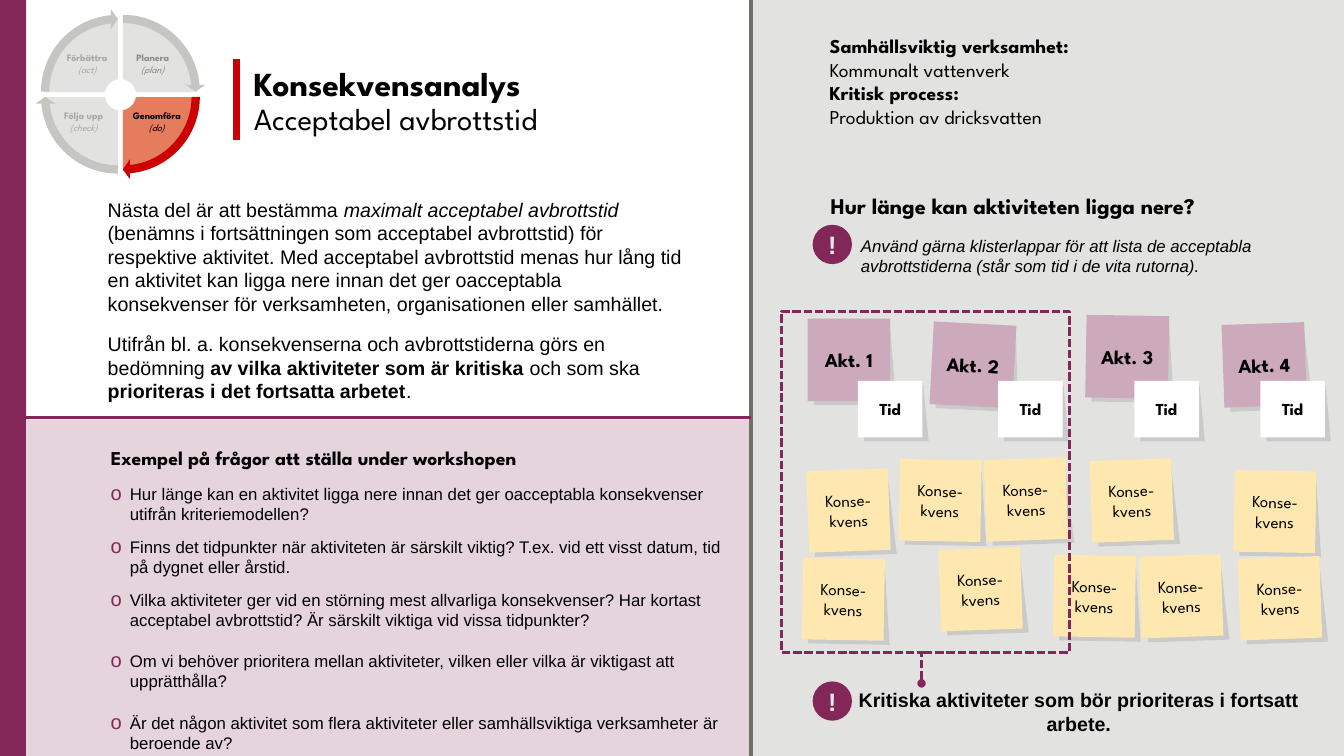
from math import asin, cos, pi, sin

from lxml.etree import SubElement
from pptx import Presentation
from pptx.dml.color import RGBColor
from pptx.enum.dml import MSO_LINE_DASH_STYLE as Dash
from pptx.enum.shapes import MSO_CONNECTOR as Connector
from pptx.enum.shapes import MSO_SHAPE as Preset
from pptx.enum.text import MSO_ANCHOR as Anchor
from pptx.enum.text import PP_ALIGN as Align
from pptx.oxml.ns import qn
from pptx.util import Inches, Pt

COLORS = {
    "plum": "822757", "pale plum": "E6D4DD", "activity": "CDA9BC",
    "consequence": "FEE8B0", "panel": "E2E2E1", "divider": "6F6E67",
    "red": "CC0000", "coral": "E67C5E", "arrow": "C5C5C2", "muted": "A9A8A4",
    "dark muted": "8C8B85", "mark": "E7E6E6", "black": "000000", "white": "FFFFFF",
}
HEADING, BODY = "League Spartan", "Arial"
HUB_X, HUB_Y = 1.195, 0.94

QUESTIONS = [
    ("Hur länge kan en aktivitet ligga nere innan det ger oacceptabla konsekvenser utifrån kriteriemodellen?", 9),
    ("Finns det tidpunkter när aktiviteten är särskilt viktig? T.ex. vid ett visst datum, tid på dygnet eller årstid.", 9),
    ("Vilka aktiviteter ger vid en störning mest allvarliga konsekvenser? Har kortast acceptabel avbrottstid? "
     "Är särskilt viktiga vid vissa tidpunkter?", 15),
    ("Om vi behöver prioritera mellan aktiviteter, vilken eller vilka är viktigast att upprätthålla?", 15),
    ("Är det någon aktivitet som flera aktiviteter eller samhällsviktiga verksamheter är beroende av?", 0),
]
ACTIVITIES = [("Akt. 1", 8.01, 3.16, 0), ("Akt. 2", 9.24, 3.21, 3),
              ("Akt. 3", 10.77, 3.13, 1), ("Akt. 4", 12.13, 3.21, -2)]
TIME_LEFTS = [8.51, 9.9, 11.25, 12.5]
CONSEQUENCES = [
    (8.01, 4.66, -2), (8.92, 4.56, 1), (9.77, 4.55, -2), (10.82, 4.56, -2), (12.24, 4.67, 1),
    (7.96, 5.54, 1), (9.32, 5.44, -2), (10.45, 5.51, 1), (11.31, 5.51, -2), (12.29, 5.53, -2),
]


def rgb(color):
    return RGBColor.from_string(COLORS[color])


def paint(shape, fill):
    shape.shadow.inherit = False
    shape.line.fill.background()
    shape.fill.solid()
    shape.fill.fore_color.rgb = rgb(fill)


def add_block(slide, preset, left, top, width, height, fill):
    block = slide.shapes.add_shape(preset, Inches(left), Inches(top), Inches(width), Inches(height))
    paint(block, fill)
    return block


def add_outline(slide, points, fill):
    corners = [(Inches(x), Inches(y)) for x, y in points]
    builder = slide.shapes.build_freeform(*corners[0])
    builder.add_line_segments(corners[1:], close=True)
    outline = builder.convert_to_shape()
    paint(outline, fill)
    return outline


def add_line(slide, start, end, color, weight):
    line = slide.shapes.add_connector(Connector.STRAIGHT, *map(Inches, start + end))
    line.line.color.rgb = rgb(color)
    line.line.width = Pt(weight)
    SubElement(line._element.spPr, qn("a:effectLst"))
    return line


def style_run(run, size, font, color, style=""):
    run.font.size = Pt(size)
    run.font.name = font
    run.font.color.rgb = rgb(color)
    run.font.bold = "b" in style
    run.font.italic = "i" in style


def label_block(block, text, size, font, color, bold=True):
    frame = block.text_frame
    frame.text = text
    frame.word_wrap = True
    frame.vertical_anchor = Anchor.MIDDLE
    frame.margin_left = frame.margin_right = 0
    frame.paragraphs[0].alignment = Align.CENTER
    for run in frame.paragraphs[0].runs:
        style_run(run, size, font, color, "b" if bold else "")


def add_text(slide, left, top, width, height, paragraphs, size, font, color="black",
             align=Align.LEFT, spacing=1.0, after=0, wrap=True):
    """Each paragraph is a list of (text, style); a text ending in \\v breaks the line."""
    box = slide.shapes.add_textbox(Inches(left), Inches(top), Inches(width), Inches(height))
    frame = box.text_frame
    frame.word_wrap = wrap
    for index, pieces in enumerate(paragraphs):
        paragraph = frame.paragraphs[0] if index == 0 else frame.add_paragraph()
        paragraph.alignment = align
        paragraph.line_spacing = spacing
        paragraph.space_after = Pt(after)
        for text, style in pieces:
            run = paragraph.add_run()
            run.text = text.rstrip("\v")
            style_run(run, size, font, color, style)
            if text.endswith("\v"):
                paragraph.add_line_break()
    return frame


def add_bullet(paragraph):
    properties = paragraph._p.get_or_add_pPr()
    properties.set("marL", str(Inches(0.19)))
    properties.set("indent", str(-Inches(0.19)))
    color = SubElement(properties, qn("a:buClr"))
    SubElement(color, qn("a:srgbClr"), val=COLORS["plum"])
    SubElement(properties, qn("a:buSzPct"), val="120000")
    SubElement(properties, qn("a:buFont"), typeface=BODY)
    SubElement(properties, qn("a:buChar"), char="o")


def add_note(slide, left, top, width, height, fill, angle=0):
    """Sticky note on a slanted, translucent shadow."""
    x, y = left + 0.06, top + 0.04
    shadow = add_outline(slide, [(x, y), (x + 0.92 * width, y), (x + width, y + height), (x, y + height)], "black")
    shadow.rotation = angle
    tint = shadow._element.spPr.find(qn("a:solidFill"))[0]
    SubElement(tint, qn("a:alpha"), val="10000")
    note = add_block(slide, Preset.RECTANGLE, left, top, width, height, fill)
    note.rotation = angle
    return note


def add_quadrant(slide, side_x, side_y, fill):
    gap, outer, inner, steps = 0.025, 0.73, 0.155, 24
    start = asin(gap / inner)
    turns = [step / steps for step in range(steps + 1)]
    rim = [(gap + outer * cos(t * pi / 2), gap + outer * sin(t * pi / 2)) for t in turns]
    angles = [pi / 2 - start - t * (pi / 2 - 2 * start) for t in turns]
    hub = [(inner * cos(a), inner * sin(a)) for a in angles]
    add_outline(slide, [(HUB_X + side_x * x, HUB_Y + side_y * y) for x, y in rim + hub], fill)


def add_cycle(slide):
    for side_x, side_y, fill in [(-1, -1, "panel"), (-1, 1, "panel"), (1, -1, "panel"), (1, 1, "coral")]:
        add_quadrant(slide, side_x, side_y, fill)
    arrows = [(0.4, 0.14, "red"), (0.35, 0.14, "arrow"), (0.35, 0.09, "arrow"), (0.4, 0.09, "arrow")]
    for quarter, (left, top, fill) in enumerate(arrows):
        arrow = add_block(slide, Preset.CIRCULAR_ARROW, left, top, 1.64, 1.64, fill)
        start = 54 * quarter
        for index, value in enumerate([0.05, 3.28, start + 50.72, start, 0.06]):
            arrow.adjustments[index] = value
    phases = [("Förbättra", "(act)", 0.55, 0.48, 0.63, "muted"), ("Följa upp", "(check)", 0.51, 1.05, 0.64, "muted"),
              ("Genomföra", "(do)", 1.18, 1.05, 0.75, "black"), ("Planera", "(plan)", 1.15, 0.48, 0.73, "dark muted")]
    for name, step, left, top, width, color in phases:
        add_text(slide, left, top, width, 0.33, [[(name, "b")], [(step, "i")]], 7, HEADING, color,
                 Align.CENTER, spacing=0.9, after=1, wrap=False)


def add_panels(slide):
    add_block(slide, Preset.RECTANGLE, 0, 0, 0.26, 7.5, "plum")
    add_block(slide, Preset.RECTANGLE, 7.45, 0, 5.88, 7.5, "panel")
    add_block(slide, Preset.RECTANGLE, 0.26, 4.16, 7.2, 3.34, "pale plum")
    add_line(slide, (2.35, 0.59), (2.35, 1.39), "red", 5)
    add_line(slide, (7.45, 0), (7.45, 7.5), "divider", 2.5)
    add_line(slide, (0.26, 4.14), (7.45, 4.14), "plum", 2.5)


def add_texts(slide):
    title = add_text(slide, 2.42, 0.62, 4.43, 0.8, [[("Konsekvensanalys\v", "b"), ("Acceptabel avbrottstid", "")]],
                     24, HEADING, spacing=0.9)
    title.paragraphs[0].runs[1].font.size = Pt(22)
    add_text(slide, 0.97, 1.91, 5.92, 2.15, [
        [("Nästa del är att bestämma ", ""), ("maximalt acceptabel avbrottstid ", "i"),
         ("(benämns i fortsättningen som acceptabel avbrottstid) för respektive aktivitet. Med acceptabel "
          "avbrottstid menas hur lång tid en aktivitet kan ligga nere innan det ger oacceptabla konsekvenser "
          "för verksamheten, organisationen eller samhället.", "")],
        [("Utifrån bl. a. konsekvenserna och avbrottstiderna görs en bedömning ", ""),
         ("av vilka aktiviteter som är kritiska ", "b"), ("och som ska ", ""),
         ("prioriteras i det fortsatta arbetet", "b"), (".", "")]], 14, BODY, after=12)
    add_text(slide, 1, 4.37, 4.65, 0.34, [[("Exempel på frågor att ställa under workshopen", "b")]],
             14, HEADING, wrap=False)
    questions = add_text(slide, 1, 4.75, 6.33, 2.75, [[(text, "")] for text, _ in QUESTIONS], 12, BODY)
    for paragraph, (_, after) in zip(questions.paragraphs, QUESTIONS):
        add_bullet(paragraph)
        paragraph.space_after = Pt(after)
    add_text(slide, 8.13, 0.29, 3.97, 1.04, [[
        ("Samhällsviktig verksamhet:\v", "b"), ("Kommunalt vattenverk\v", ""),
        ("Kritisk process:\v", "b"), ("Produktion av dricksvatten", "")]], 14, HEADING)
    add_text(slide, 8.14, 1.86, 4.4, 0.37, [[("Hur länge kan aktiviteten ligga nere?", "b")]], 16, HEADING)
    add_text(slide, 8.44, 2.29, 4.51, 0.5, [[(
        "Använd gärna klisterlappar för att lista de acceptabla avbrottstiderna "
        "(står som tid i de vita rutorna).", "i")]], 12, BODY)
    add_text(slide, 8.2, 6.78, 5, 0.57, [[("Kritiska aktiviteter som bör prioriteras i fortsatt arbete.", "b")]],
             14, BODY, align=Align.CENTER)
    for top in (2.23, 6.76):
        mark = add_block(slide, Preset.OVAL, 8.06, top, 0.39, 0.39, "plum")
        mark.text_frame.margin_top = mark.text_frame.margin_bottom = 0
        label_block(mark, "!", 18, BODY, "mark")


def add_board(slide):
    for name, left, top, angle in ACTIVITIES:
        note = add_note(slide, left, top, 0.82, 0.82, "activity", angle)
        label_block(note, name, 14, HEADING, "black")
    for left in TIME_LEFTS:
        label_block(add_note(slide, left, 3.78, 0.64, 0.56, "white"), "Tid", 12, HEADING, "black")
    for left, top, angle in CONSEQUENCES:
        note = add_note(slide, left, top, 0.81, 0.81, "consequence", angle)
        label_block(note, "Konse-\vkvens", 12, HEADING, "black", bold=False)
    critical = add_block(slide, Preset.RECTANGLE, 7.75, 3.09, 2.86, 3.38, "white")
    critical.fill.background()
    critical.line.color.rgb = rgb("plum")
    critical.line.width = Pt(2)
    pointer = add_line(slide, (9.14, 6.78), (9.14, 6.47), "plum", 2)
    for dashed in (critical, pointer):
        dashed.line.dash_style = Dash.SQUARE_DOT
    SubElement(pointer.line._get_or_add_ln(), qn("a:headEnd"), type="oval")


def main():
    deck = Presentation()
    deck.slide_width, deck.slide_height = Inches(13.33), Inches(7.5)
    slide = deck.slides.add_slide(deck.slide_layouts[6])
    add_panels(slide)
    add_board(slide)
    add_texts(slide)
    add_cycle(slide)
    deck.save("out.pptx")


if __name__ == "__main__":
    main()
